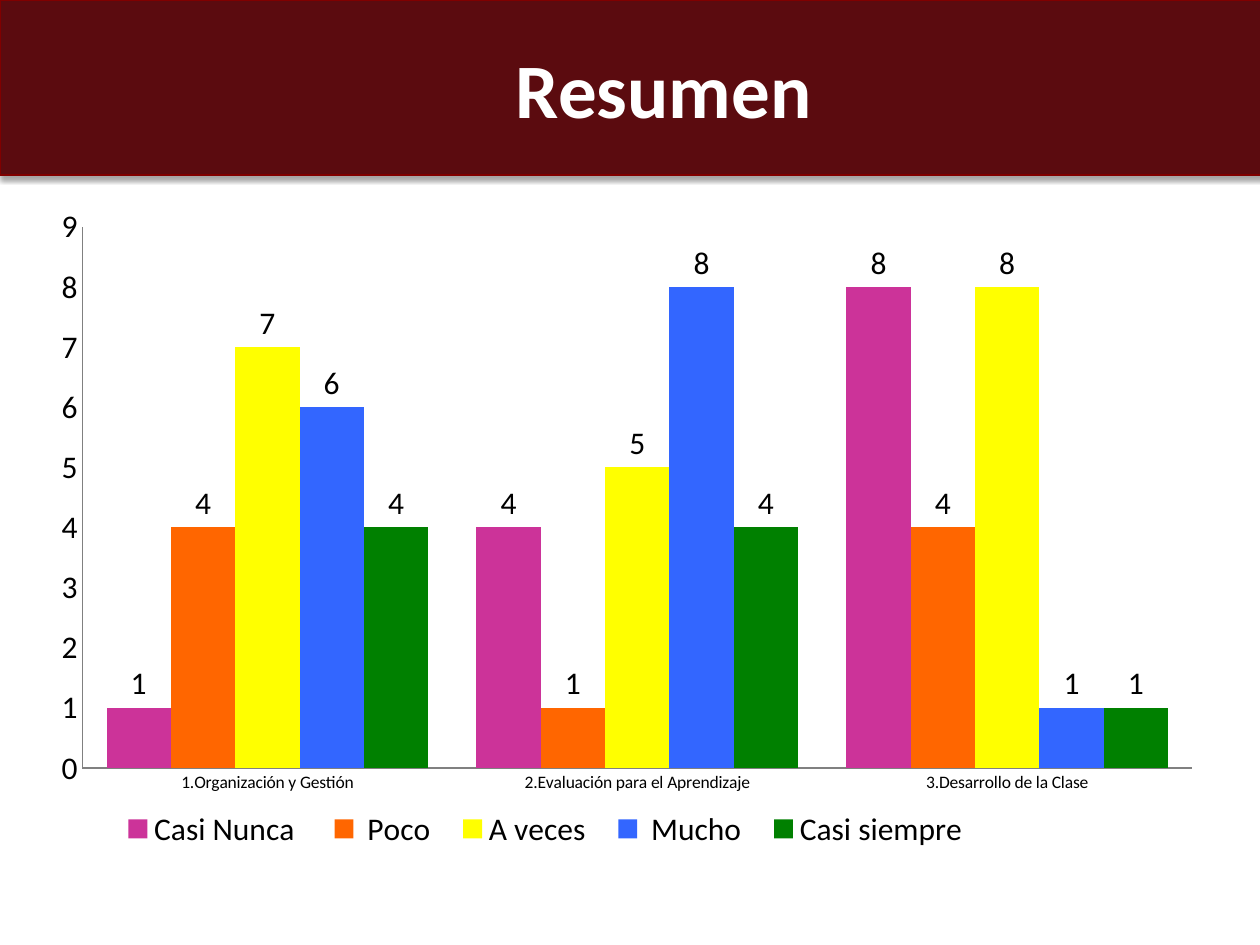
from lxml import etree
from pptx import Presentation
from pptx import util as u
from pptx.chart.data import CategoryChartData
from pptx.dml.color import RGBColor
from pptx.enum import chart as ch, text
from pptx.oxml import parse_xml
from pptx.oxml.ns import nsdecls, qn

MAROON = RGBColor(0x5B, 0x0B, 0x0F)
DARK_RED = RGBColor(0x80, 0x00, 0x00)
WHITE = RGBColor(0xFF, 0xFF, 0xFF)
BLACK = RGBColor(0x00, 0x00, 0x00)
GRAY = RGBColor(0x80, 0x80, 0x80)
MAGENTA = RGBColor(0xCC, 0x33, 0x99)
ORANGE = RGBColor(0xFF, 0x66, 0x00)
YELLOW = RGBColor(0xFF, 0xFF, 0x00)
BLUE = RGBColor(0x33, 0x66, 0xFF)
GREEN = RGBColor(0x00, 0x80, 0x00)
FONT = "Calibri"

HEADING = "Resumen"
AREAS = [
    "1.Organización y Gestión",
    "2.Evaluación para el Aprendizaje",
    "3.Desarrollo de la Clase",
]
ANSWERS = [
    ("Casi Nunca ", (1, 4, 8), MAGENTA),
    (" Poco", (4, 1, 4), ORANGE),
    ("A veces", (7, 5, 8), YELLOW),
    (" Mucho", (6, 8, 1), BLUE),
    ("Casi siempre ", (4, 4, 1), GREEN),
]


def style_font(font, size, color, bold=False):
    font.name = FONT
    font.size = u.Pt(size)
    font.bold = bold
    font.color.rgb = color


def place(part, index, x, y, w, h, inner=False):
    for old in part.findall(qn("c:layout")):
        part.remove(old)
    layout = parse_xml(f"<c:layout {nsdecls('c')}><c:manualLayout/></c:layout>")
    settings = [("layoutTarget", "inner")] if inner else []
    settings += [("xMode", "edge"), ("yMode", "edge")]
    settings += [("x", x), ("y", y), ("w", w), ("h", h)]
    for tag, value in settings:
        etree.SubElement(layout[0], qn(f"c:{tag}")).set("val", str(value))
    part.insert(index, layout)


def add_heading(slide):
    heading = slide.shapes.title
    heading.left, heading.top = u.Cm(0), u.Cm(0)
    heading.width, heading.height = u.Cm(25.5), u.Cm(3.53)
    heading.fill.solid()
    heading.fill.fore_color.rgb = MAROON
    heading.line.color.rgb = DARK_RED
    heading.line.width = u.Pt(0.75)
    heading.element.spPr.append(parse_xml(
        f'<a:effectLst {nsdecls("a")}>'
        f'<a:outerShdw blurRad="{u.Pt(3.1)}" dist="{u.Pt(1.8)}" dir="5400000" rotWithShape="0">'
        '<a:srgbClr val="000000"><a:alpha val="35000"/></a:srgbClr>'
        '</a:outerShdw></a:effectLst>'))
    frame = heading.text_frame
    frame.word_wrap = True
    frame.auto_size = text.MSO_AUTO_SIZE.NONE
    frame.vertical_anchor = text.MSO_ANCHOR.MIDDLE
    line = frame.paragraphs[0]
    line.alignment = text.PP_ALIGN.CENTER
    indent = line._p.get_or_add_pPr()
    indent.set("marL", str(u.Cm(1.27)))
    indent.set("indent", "0")
    run = line.add_run()
    run.text = HEADING
    style_font(run.font, 44, WHITE, True)


def add_survey(slide):
    data = CategoryChartData(number_format="General")
    data.categories = AREAS
    for answer, counts, _ in ANSWERS:
        data.add_series(answer, counts)
    survey = slide.shapes.add_chart(
        ch.XL_CHART_TYPE.COLUMN_CLUSTERED,
        u.Cm(0.71), u.Cm(3.89), u.Cm(23.8), u.Cm(13.64), data).chart
    style_font(survey.font, 18, BLACK)
    survey.has_title = False

    columns = survey.plots[0]
    columns.gap_width = 75
    columns.overlap = 0
    columns.vary_by_categories = False
    for series, (_, _, color) in zip(columns.series, ANSWERS):
        series.format.fill.solid()
        series.format.fill.fore_color.rgb = color
        series.invert_if_negative = False
        labels = series.data_labels
        labels.show_value = True
        labels.position = ch.XL_LABEL_POSITION.OUTSIDE_END
        style_font(labels.font, 18, BLACK)

    areas, scale = survey.category_axis, survey.value_axis
    for axis, size in ((areas, 10), (scale, 18)):
        axis.has_major_gridlines = False
        axis.major_tick_mark = ch.XL_TICK_MARK.NONE
        axis.minor_tick_mark = ch.XL_TICK_MARK.NONE
        axis.format.line.color.rgb = GRAY
        axis.format.line.width = u.Pt(0.75)
        style_font(axis.tick_labels.font, size, BLACK)
    scale.minimum_scale, scale.maximum_scale, scale.major_unit = 0, 9, 1

    survey.has_legend = True
    legend = survey.legend
    legend.position = ch.XL_LEGEND_POSITION.BOTTOM
    legend.include_in_layout = False
    style_font(legend.font, 18, BLACK)

    place(survey.element.find(".//" + qn("c:plotArea")), 0, 0.04, 0.05, 0.94, 0.8, inner=True)
    place(survey.element.find(".//" + qn("c:legend")), 1, 0.06, 0.9, 0.75, 0.08)


def main():
    deck = Presentation()
    deck.slide_width, deck.slide_height = u.Cm(25.4), u.Cm(19.05)
    slide = deck.slides.add_slide(deck.slide_layouts[5])
    add_heading(slide)
    add_survey(slide)
    deck.save("out.pptx")


if __name__ == "__main__":
    main()
